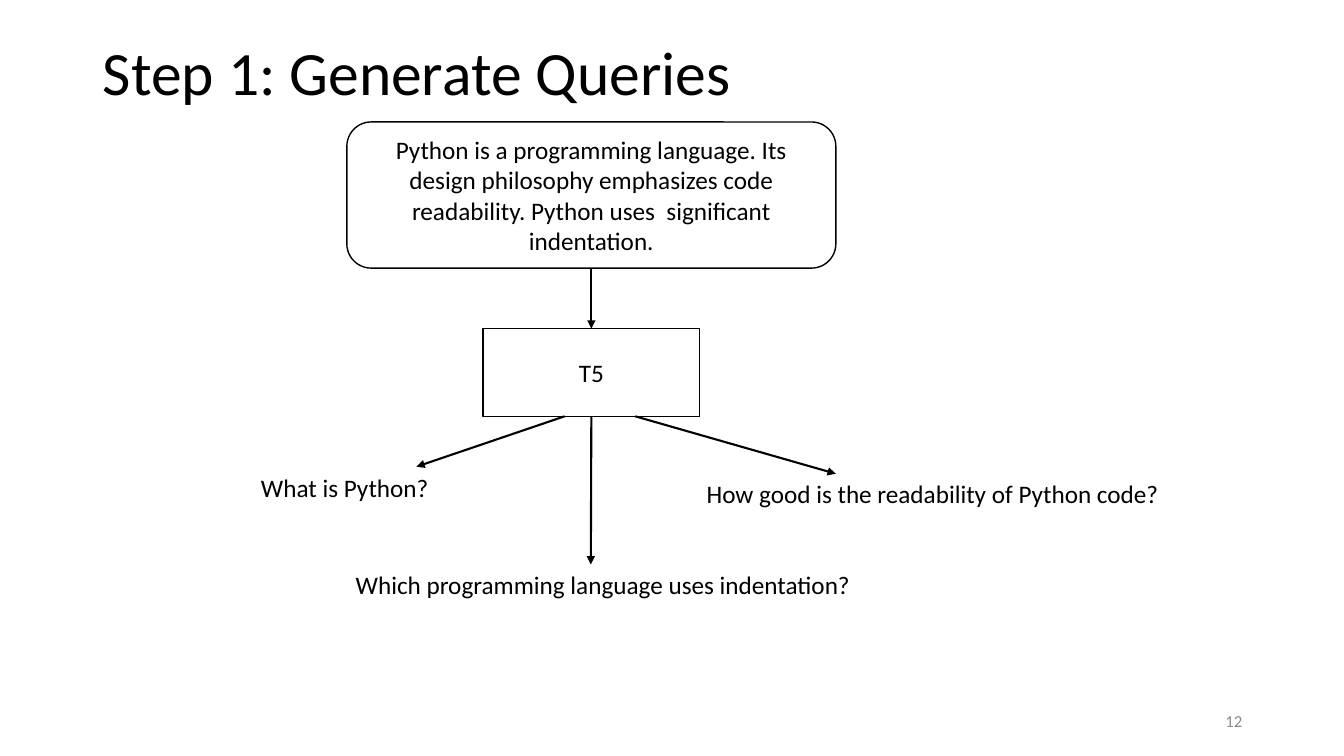
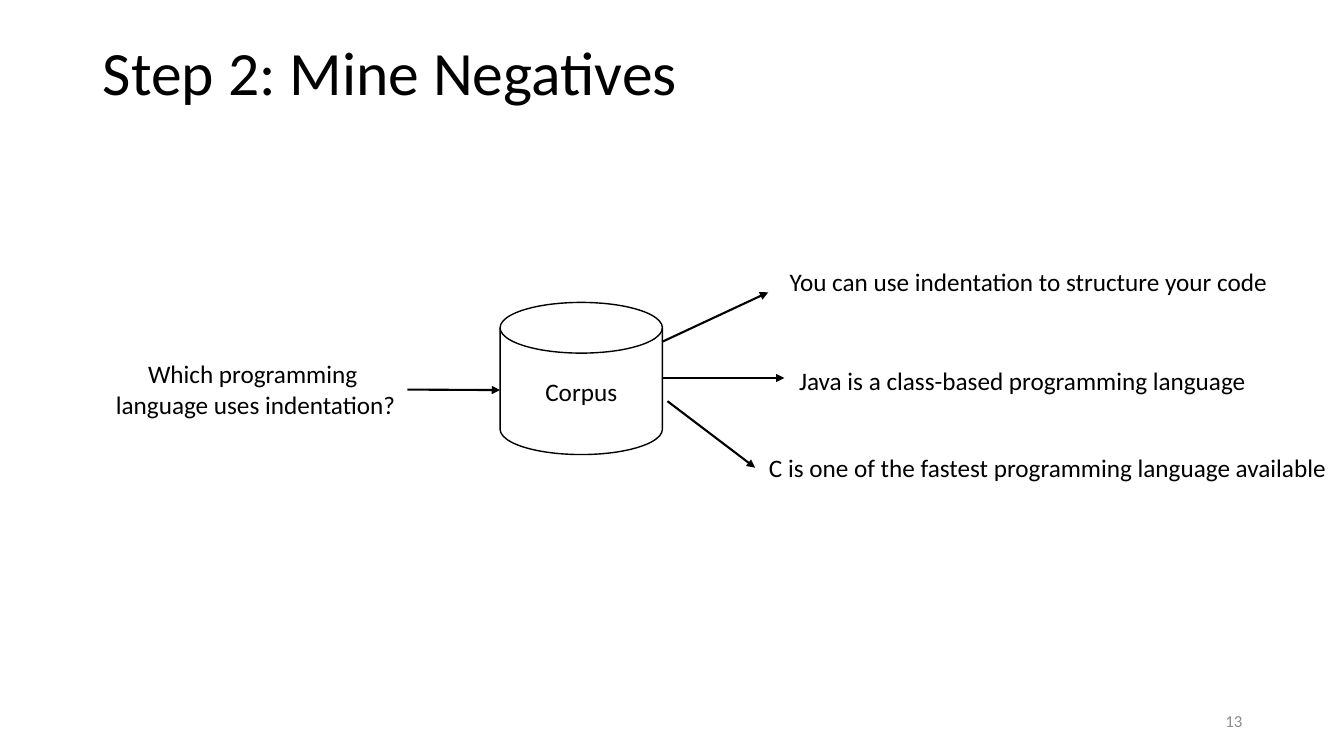
from lxml.etree import SubElement
from pptx import Presentation
from pptx.dml.color import RGBColor
from pptx.enum.shapes import MSO_CONNECTOR as Connector, MSO_SHAPE as Shape
from pptx.enum.text import MSO_ANCHOR as Anchor, MSO_AUTO_SIZE as AutoSize, PP_ALIGN as Align
from pptx.oxml.ns import qn
from pptx.util import Emu, Pt

EMU_PER_PX = 9144
FONT = "Calibri"
INK, PAPER, MUTED = "000000", "FFFFFF", "8C8C8C"
TITLE_BOX = (92, 2, 1150, 145)
NUMBER_BOX = (942, 695, 300, 40)
TOP, BOTTOM, RIGHT = 0, 2, 3


def px(*lengths):
    """Turn px lengths into EMU."""
    return [Emu(length * EMU_PER_PX) for length in lengths]


def color(code):
    """Turn a hex string into a colour."""
    return RGBColor.from_string(code)


def write(shape, text, size=18, ink=INK, align=Align.CENTER, anchor=Anchor.MIDDLE):
    """Put one formatted paragraph into a shape and return it."""
    frame = shape.text_frame
    frame.text = text
    frame.vertical_anchor = anchor
    para = frame.paragraphs[0]
    para.alignment = align
    para.font.name, para.font.size = FONT, Pt(size)
    para.font.color.rgb = color(ink)
    return para


def add_page(deck, title, number):
    """Add a slide with the shared title and page number."""
    page = deck.slides.add_slide(deck.slide_layouts.get_by_name("Title Only"))
    heading = page.shapes.title
    heading.left, heading.top, heading.width, heading.height = px(*TITLE_BOX)
    write(heading, title, 44, align=Align.LEFT).line_spacing = 0.9
    heading.text_frame.auto_size = AutoSize.NONE
    footer = page.shapes.add_textbox(*px(*NUMBER_BOX))
    footer.text_frame.word_wrap = True
    write(footer, str(number), 12, MUTED, Align.RIGHT)
    return page


def add_node(page, kind, box, text):
    """Add an outlined shape with centred text."""
    node = page.shapes.add_shape(kind, *px(*box))
    node.shadow.inherit = False
    node.fill.solid()
    node.fill.fore_color.rgb = color(PAPER)
    node.line.color.rgb = color(INK)
    node.line.width = Pt(1)
    write(node, text)
    return node


def add_label(page, box, text, align=Align.CENTER):
    """Add an unwrapped text label that fits its text."""
    label = page.shapes.add_textbox(*px(*box))
    label.text_frame.word_wrap = False
    label.text_frame.auto_size = AutoSize.SHAPE_TO_FIT_TEXT
    write(label, text, align=align, anchor=Anchor.TOP)
    return label


def add_arrow(page, start, end, begin_at=None, end_at=None):
    """Add an arrow, joined to (shape, side) pairs where given."""
    arrow = page.shapes.add_connector(Connector.STRAIGHT, *px(*start, *end))
    arrow.line.color.rgb = color(INK)
    arrow.line.width = Pt(1.5)
    SubElement(arrow.line._get_or_add_ln(), qn("a:tailEnd"), type="triangle")
    SubElement(arrow._element.spPr, qn("a:effectLst"))
    if begin_at:
        arrow.begin_connect(*begin_at)
    if end_at:
        arrow.end_connect(*end_at)


def draw_generation(page, box):
    """Draw a passage feeding a model that asks three queries."""
    left, top, width, height = box
    middle = left + width // 2
    model_top, model_bottom = top + 205, top + 292
    passage = add_node(page, Shape.ROUNDED_RECTANGLE, (left, top, width, height),
                       "Python is a programming language. Its design philosophy emphasizes "
                       "code readability. Python uses  significant indentation.")
    model = add_node(page, Shape.RECTANGLE, (left + 135, model_top, 215, 87), "T5")
    add_arrow(page, (middle, top + height), (middle, model_top), (passage, BOTTOM), (model, TOP))
    queries = [
        ("What is Python?", (-95, 343, 188), -26, (-173, 342), None),
        ("Which programming language uses indentation?", (-1, 439, 517), 0, (0, 439),
         (model, BOTTOM)),
        ("How good is the readability of Python code?", (347, 349, 474), 44, (243, 349), None),
    ]
    for text, (x, y, w), start, (tip_x, tip_y), joint in queries:
        add_label(page, (left + x, top + y, w, 40), text, Align.LEFT)
        add_arrow(page, (middle + start, model_bottom), (middle + tip_x, top + tip_y), joint)


def draw_mining(page, box):
    """Draw a query sent to a corpus that returns three negatives."""
    left, top, width, height = box
    query = add_label(page, (left - 393, top + 51, 301, 71),
                      "Which programming \vlanguage uses indentation?")
    add_node(page, Shape.FLOWCHART_MAGNETIC_DISK, box, "Corpus")
    add_arrow(page, (left - 92, top + 87), (left, top + 87), (query, RIGHT))
    edge = left + width
    negatives = [
        ("You can use indentation to structure your code", (113, -41, 500), (0, 39), (105, -10)),
        ("Java is a class-based programming language", (123, 58, 468), (0, 75), (121, 75)),
        ("C is one of the fastest programming language available", (92, 144, 580),
         (5, 98), (92, 164)),
    ]
    for text, (x, y, w), (start_x, start_y), (tip_x, tip_y) in negatives:
        add_label(page, (edge + x, top + y, w, 40), text)
        add_arrow(page, (edge + start_x, top + start_y), (edge + tip_x, top + tip_y))


def main():
    """Build and save the deck."""
    deck = Presentation()
    deck.slide_width, deck.slide_height = px(1333, 750)
    draw_generation(add_page(deck, "Step 1: Generate Queries", 12), (344, 121, 485, 145))
    draw_mining(add_page(deck, "Step 2: Mine Negatives", 13), (496, 300, 161, 151))
    deck.save("out.pptx")


if __name__ == "__main__":
    main()
